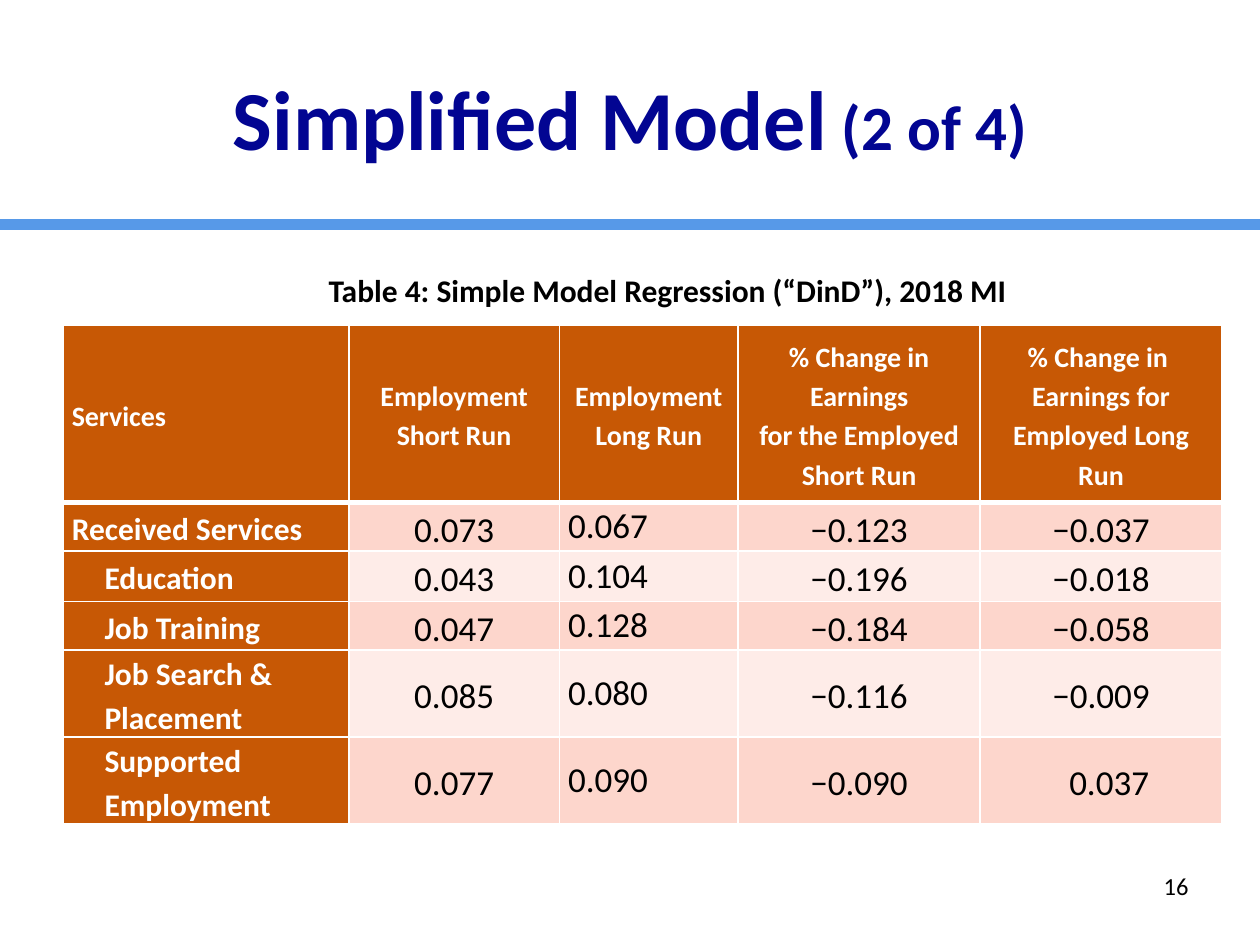
from lxml import etree
from pptx import Presentation
from pptx.dml.color import RGBColor
from pptx.enum.shapes import MSO_CONNECTOR
from pptx.enum.text import MSO_ANCHOR, PP_ALIGN
from pptx.oxml.ns import qn
from pptx.util import Inches, Pt

LEFT, CENTER = PP_ALIGN.LEFT, PP_ALIGN.CENTER
MIDDLE, TOP = MSO_ANCHOR.MIDDLE, MSO_ANCHOR.TOP
STRAIGHT = MSO_CONNECTOR.STRAIGHT
WIDTH, HEIGHT = Inches(10), Inches(7.5)

NAVY, BLUE, WHITE, BLACK = "020592", "5799E8", "FFFFFF", "000000"
ORANGE, BANDS = "C75805", ("FDD6CC", "FEECE8")
COLUMN_WIDTHS = (2.27, 1.67, 1.42, 1.92, 1.92)
ROW_HEIGHTS = (1.41, 0.34, 0.4, 0.28, 0.47, 0.42)
HEADERS = (
    ("Services",),
    ("Employment Short Run",),
    ("Employment Long Run",),
    ("% Change in Earnings", "for the Employed Short Run"),
    ("% Change in ", "Earnings for", "Employed Long Run"),
)
SERVICES = (
    ("Received Services", "0.073", "0.067", "−0.123", "−0.037"),
    ("Education", "0.043", "0.104", "−0.196", "−0.018"),
    ("Job Training", "0.047", "0.128", "−0.184", "−0.058"),
    ("Job Search & Placement", "0.085", "0.080", "−0.116", "−0.009"),
    ("Supported Employment", "0.077", "0.090", "−0.090", "0.037"),
)
HEADER_FONT = {"size": 16, "color": WHITE, "bold": True}
SERVICE_FONT = {"size": 18, "color": WHITE, "bold": True}
VALUE_FONT = {"size": 20, "color": BLACK, "bold": False}
SPACED = {"line_spacing": 1.15, "space_after": Pt(8)}


def color(value):
    return RGBColor.from_string(value)


def share(left, top, width, height):
    return [int(part * size) for part, size in
            zip((left, top, width, height), (WIDTH, HEIGHT) * 2)]


def set_attributes(target, values):
    for name, value in values.items():
        setattr(target, name, value)


def add_run(paragraph, text, size, color_value, bold):
    run = paragraph.add_run()
    run.text = text
    set_attributes(run.font, {"name": "Calibri", "size": Pt(size), "bold": bold})
    run.font.color.rgb = color(color_value)


def write_lines(frame, lines, font, layout):
    for index, line in enumerate(lines):
        paragraph = frame.add_paragraph() if index else frame.paragraphs[0]
        set_attributes(paragraph, layout)
        add_run(paragraph, line, font["size"], font["color"], font["bold"])


def indent(paragraph, inches):
    paragraph._p.get_or_add_pPr().set("marL", str(Inches(inches)))


def add_rule(slide, top, value, weight):
    left, y, width, _ = share(0, top, 1, 0)
    line = slide.shapes.add_connector(STRAIGHT, left, y, left + width, y)
    line.line.color.rgb = color(value)
    line.line.width = Pt(weight)
    etree.SubElement(line._element.spPr, qn("a:effectLst"))


def add_title(slide, box):
    title = slide.shapes.title
    set_attributes(title, dict(zip(("left", "top", "width", "height"), box)))
    frame = title.text_frame
    set_attributes(frame, {"word_wrap": True, "vertical_anchor": MIDDLE})
    paragraph = frame.paragraphs[0]
    paragraph.alignment = CENTER
    add_run(paragraph, "Simplified Model", 48, NAVY, True)
    add_run(paragraph, " (2 of 4)", 36, NAVY, True)


def add_label(slide, box, text, font, layout, anchor):
    frame = slide.shapes.add_textbox(*box).text_frame
    set_attributes(frame, {"word_wrap": True, "vertical_anchor": anchor})
    write_lines(frame, [text], font, {"alignment": CENTER, **layout})


def set_borders(cell, bottom_weight):
    properties = cell._tc.get_or_add_tcPr()
    weights = {"lnL": 1, "lnR": 1, "lnT": 1, "lnB": bottom_weight}
    for position, (side, weight) in enumerate(weights.items()):
        border = etree.Element(qn(f"a:{side}"), w=str(Pt(weight)))
        fill = etree.SubElement(border, qn("a:solidFill"))
        etree.SubElement(fill, qn("a:srgbClr"), val=WHITE)
        properties.insert(position, border)


def fill_cell(cell, lines, fill, font, layout, bottom_weight=1):
    set_attributes(cell, {
        "vertical_anchor": MIDDLE, "margin_left": Inches(0.07),
        "margin_right": Inches(0.07), "margin_top": 0, "margin_bottom": 0,
    })
    cell.fill.solid()
    cell.fill.fore_color.rgb = color(fill)
    set_borders(cell, bottom_weight)
    write_lines(cell.text_frame, lines, font, layout)


def add_results_table(slide, box):
    table = slide.shapes.add_table(len(ROW_HEIGHTS), len(COLUMN_WIDTHS), *box).table
    table.first_col = True
    for column, width in zip(table.columns, COLUMN_WIDTHS):
        column.width = Inches(width)
    for row, height in zip(table.rows, ROW_HEIGHTS):
        row.height = Inches(height)

    for column, lines in enumerate(HEADERS):
        layout = {"alignment": CENTER if column else LEFT, "line_spacing": 1.15}
        if column in (1, 2):
            layout.update(SPACED)
        fill_cell(table.cell(0, column), lines, ORANGE, HEADER_FONT, layout, 3)

    for row, (service, *values) in enumerate(SERVICES, 1):
        name_cell = table.cell(row, 0)
        fill_cell(name_cell, [service], ORANGE, SERVICE_FONT, SPACED)
        if row > 1:
            paragraph = name_cell.text_frame.paragraphs[0]
            paragraph.level = 1
            indent(paragraph, 0.26)
        for column, value in enumerate(values, 1):
            layout = {"alignment": LEFT} if column == 2 else {"alignment": CENTER, **SPACED}
            cell = table.cell(row, column)
            fill_cell(cell, [value], BANDS[(row - 1) % 2], VALUE_FONT, layout)
            if column > 2 and not value.startswith("−"):
                indent(cell.text_frame.paragraphs[0], 0.13)


def main():
    presentation = Presentation()
    set_attributes(presentation, {"slide_width": WIDTH, "slide_height": HEIGHT})
    slide = presentation.slides.add_slide(presentation.slide_layouts[5])
    add_rule(slide, 1.78 / 7.5, BLUE, 7)
    add_rule(slide, 1.73 / 7.5, WHITE, 0.5)
    add_title(slide, share(0.05, 0.04, 0.9, 1.25 / 7.5))
    add_label(slide, share(0.9, 6.83 / 7.5, 0.067, 0.4 / 7.5), "16",
              {"size": 14, "color": BLACK, "bold": False}, {}, MIDDLE)
    add_results_table(slide, share(0.05, 2.58 / 7.5, 0.92, 3.87 / 7.5))
    add_label(slide, share(0.192, 2.06 / 7.5, 0.676, 0.43 / 7.5),
              "Table 4: Simple Model Regression (“DinD”), 2018 MI",
              {"size": 18, "color": BLACK, "bold": True}, SPACED, TOP)
    presentation.save("out.pptx")


if __name__ == "__main__":
    main()
